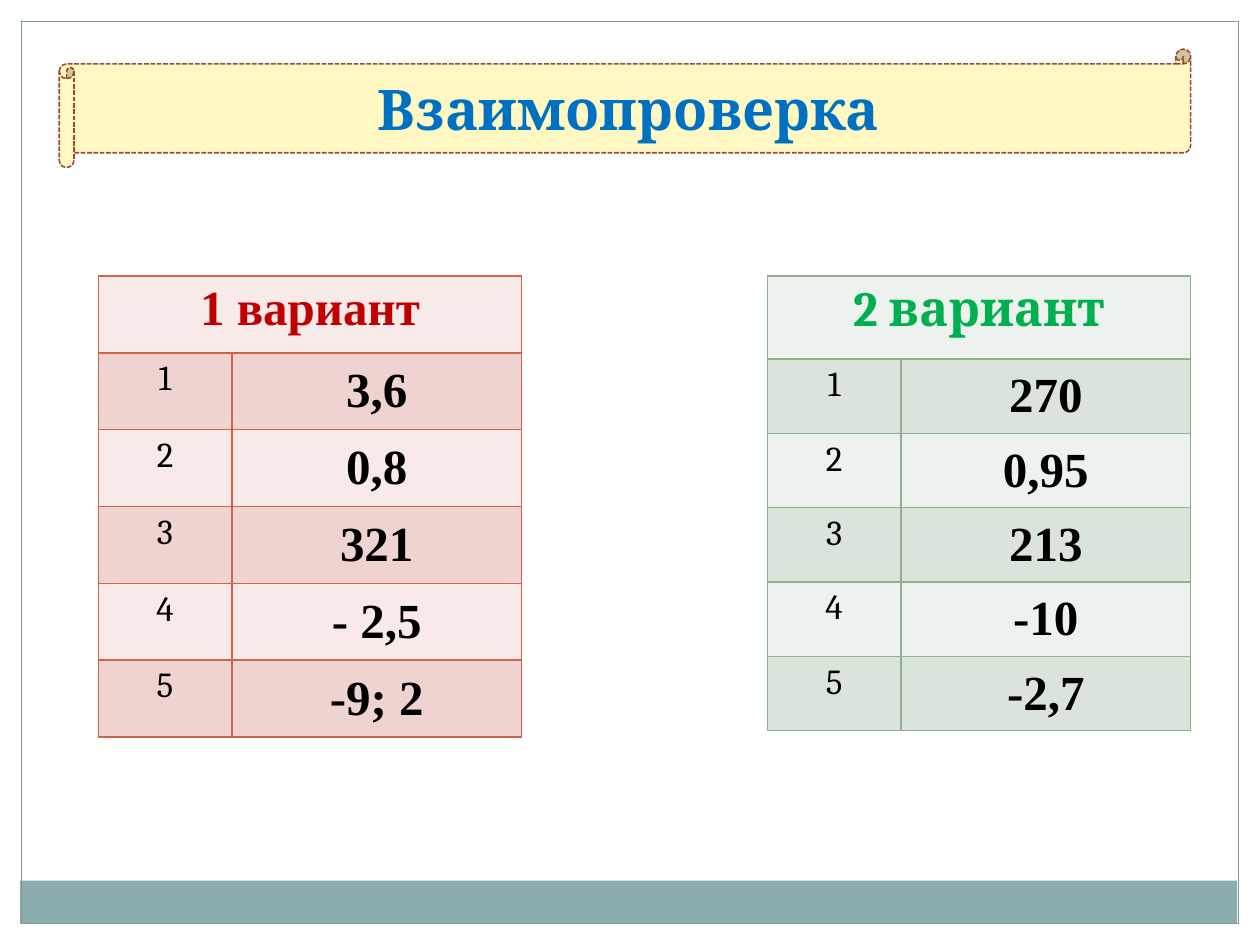
from dataclasses import dataclass

import lxml.etree
import pptx
import pptx.dml.color
import pptx.enum.dml
import pptx.enum.shapes
import pptx.enum.text
import pptx.oxml
import pptx.oxml.ns
import pptx.util

Inches = pptx.util.Inches
Pt = pptx.util.Pt
RGB = pptx.dml.color.RGBColor.from_string
SHAPE = pptx.enum.shapes.MSO_SHAPE
ANCHOR = pptx.enum.text.MSO_ANCHOR
qn = pptx.oxml.ns.qn


@dataclass(frozen=True)
class Theme:
    serif: str = "Cambria"
    roman: str = "Times New Roman"
    title_size: int = 32
    answer_size: int = 28
    number_size: int = 20
    text: str = "000000"
    title: str = "0070C0"
    scroll: str = "FFF8C2"
    scroll_line: str = "9B4936"
    band: str = "8CADAE"
    frame: str = "7C999A"
    border_width: float = 1


@dataclass(frozen=True)
class Variant:
    heading: str
    heading_font: str
    heading_color: str
    left: float
    header_height: float
    row_height: float
    border: str
    light: str
    dark: str
    answers: tuple[str, ...]


THEME = Theme()
TABLE_TOP = 2.19
COLUMN_WIDTHS = (1.06, 2.3)
VARIANTS = (
    Variant("1 вариант", THEME.roman, "C00000", 0.78, 0.61, 0.61,
            "D16349", "F7EAE9", "EED3D0",
            ("3,6", "0,8", "321", "- 2,5", "-9; 2")),
    Variant("2 вариант", THEME.serif, "00B050", 6.09, 0.66, 0.59,
            "8FB08C", "EEF2EE", "DBE4DA",
            ("270", "0,95", "213", "-10", "-2,7")),
)


def write(tf, text: str, font: str, size: float, color: str, bold: bool) -> None:
    p = tf.paragraphs[0]
    p.text = text
    p.alignment = pptx.enum.text.PP_ALIGN.CENTER
    p.font.name = font
    p.font.size = Pt(size)
    p.font.bold = bold
    p.font.color.rgb = RGB(color)


def add_shape(s, kind, left: float, top: float, width: float, height: float,
              fill: str | None = None, line: str | None = None,
              line_width: float = 0.75):
    sp = s.shapes.add_shape(kind, Inches(left), Inches(top),
                            Inches(width), Inches(height))
    sp.shadow.inherit = False
    if fill:
        sp.fill.solid()
        sp.fill.fore_color.rgb = RGB(fill)
    else:
        sp.fill.background()
    if line:
        sp.line.color.rgb = RGB(line)
        sp.line.width = Pt(line_width)
    else:
        sp.line.fill.background()
    return sp


def set_borders(cell, color: str) -> None:
    tc_pr = cell._tc.get_or_add_tcPr()
    for i, side in enumerate(("lnL", "lnR", "lnT", "lnB")):
        ln = lxml.etree.Element(qn(f"a:{side}"), w=str(Pt(THEME.border_width)))
        fill = lxml.etree.SubElement(ln, qn("a:solidFill"))
        lxml.etree.SubElement(fill, qn("a:srgbClr"), val=color)
        tc_pr.insert(i, ln)


def add_variant(s, v: Variant) -> None:
    heights = [v.header_height] + [v.row_height] * len(v.answers)
    table = s.shapes.add_table(
        len(heights), len(COLUMN_WIDTHS), Inches(v.left), Inches(TABLE_TOP),
        Inches(sum(COLUMN_WIDTHS)), Inches(sum(heights))).table
    for column, width in zip(table.columns, COLUMN_WIDTHS):
        column.width = Inches(width)
    for i, (row, height) in enumerate(zip(table.rows, heights)):
        row.height = Inches(height)
        for cell in row.cells:
            cell.fill.solid()
            cell.fill.fore_color.rgb = RGB(v.dark if i % 2 else v.light)
            set_borders(cell, v.border)

    header = table.cell(0, 0)
    header.merge(table.cell(0, 1))
    write(header.text_frame, v.heading, v.heading_font, THEME.answer_size,
          v.heading_color, True)
    for i, answer in enumerate(v.answers, 1):
        write(table.cell(i, 0).text_frame, str(i), THEME.serif,
              THEME.number_size, THEME.text, False)
        cell = table.cell(i, 1)
        cell.vertical_anchor = ANCHOR.MIDDLE
        write(cell.text_frame, answer, THEME.roman, THEME.answer_size,
              THEME.text, True)


def main() -> None:
    prs = pptx.Presentation()
    prs.slide_width = Inches(10)
    prs.slide_height = Inches(7.5)
    s = prs.slides.add_slide(prs.slide_layouts[6])

    add_shape(s, SHAPE.RECTANGLE, 0.16, 6.99, 9.66, 0.34, fill=THEME.band)
    add_shape(s, SHAPE.RECTANGLE, 0.17, 0.17, 9.66, 7.16, line=THEME.frame)

    scroll = add_shape(s, SHAPE.HORIZONTAL_SCROLL, 0.47, 0.39, 8.98, 0.94,
                       THEME.scroll, THEME.scroll_line, 0.9)
    scroll.line.dash_style = pptx.enum.dml.MSO_LINE.SQUARE_DOT
    tf = scroll.text_frame
    tf.word_wrap = True
    tf.vertical_anchor = ANCHOR.MIDDLE
    write(tf, "Взаимопроверка", THEME.serif, THEME.title_size, THEME.title, True)

    for variant in VARIANTS:
        add_variant(s, variant)

    prs.save("out.pptx")


if __name__ == "__main__":
    main()
